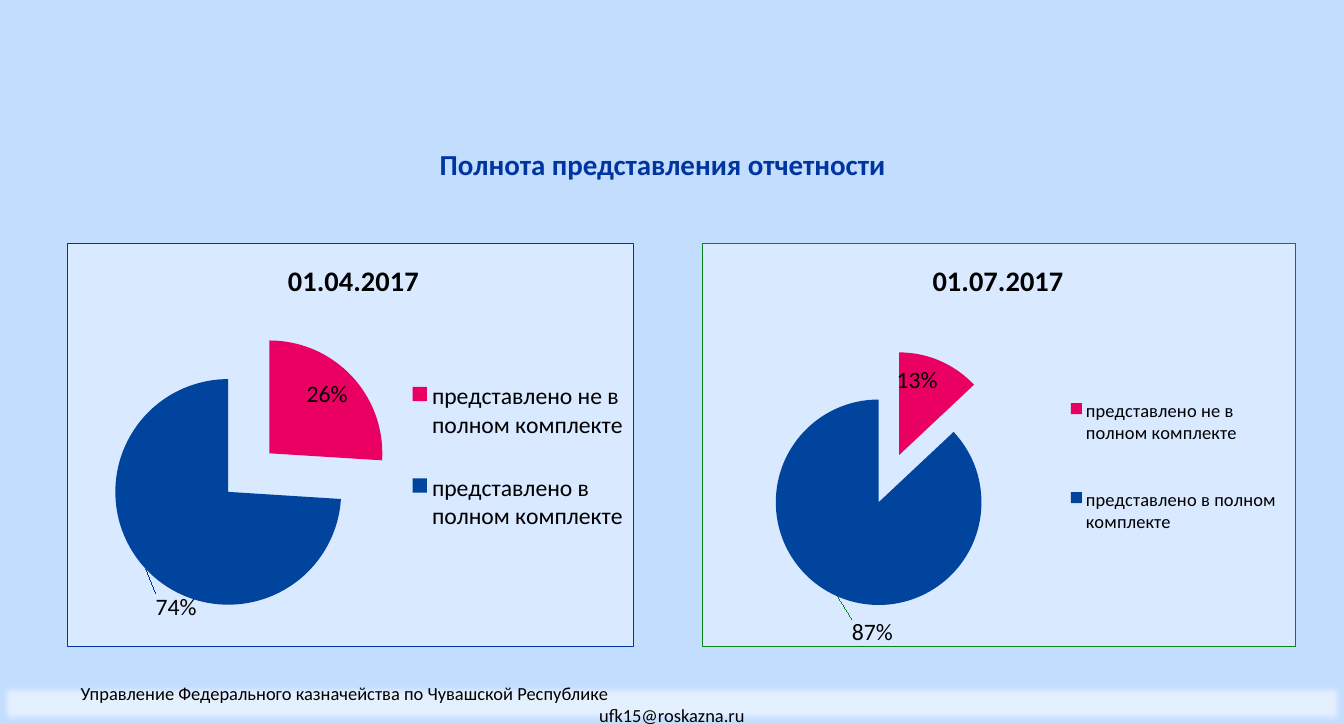
from lxml import etree
from pptx import Presentation
from pptx.chart.data import CategoryChartData
from pptx.dml.color import RGBColor
from pptx.enum.chart import XL_CHART_TYPE, XL_LABEL_POSITION, XL_LEGEND_POSITION
from pptx.enum.shapes import MSO_SHAPE
from pptx.enum.text import MSO_ANCHOR, PP_ALIGN
from pptx.oxml import parse_xml
from pptx.oxml.ns import nsdecls, qn
from pptx.util import Inches, Pt

PIE = XL_CHART_TYPE.PIE_EXPLODED
INSIDE_END = XL_LABEL_POSITION.INSIDE_END
LEGEND_RIGHT = XL_LEGEND_POSITION.RIGHT
RECTANGLE = MSO_SHAPE.RECTANGLE
MIDDLE = MSO_ANCHOR.MIDDLE
LEFT, CENTER = PP_ALIGN.LEFT, PP_ALIGN.CENTER

COLORS = {
    "background": "C3DDFF",
    "panel": "D9E9FF",
    "footer": "E5F0FF",
    "navy": "00349E",
    "green": "0A8416",
    "incomplete": "E90062",
    "complete": "00449E",
    "text": "000000",
}
CATEGORIES = ["представлено не в полном комплекте", "представлено в полном комплекте"]


def color(name):
    return RGBColor.from_string(COLORS[name])


def place(parent, index, **values):
    for layout in parent.findall(qn("c:layout")):
        parent.remove(layout)
    layout = etree.Element(qn("c:layout"))
    manual = etree.SubElement(layout, qn("c:manualLayout"))
    for tag, value in values.items():
        etree.SubElement(manual, qn(f"c:{tag}"), val=str(value))
    parent.insert(index, layout)


def place_edge(parent, index, left, top, **values):
    place(parent, index, xMode="edge", yMode="edge", x=left, y=top, **values)


class ReportSlide:
    font_name = "Calibri"

    def __init__(self, presentation):
        self.width = presentation.slide_width
        self.height = presentation.slide_height
        self.slide = presentation.slides.add_slide(presentation.slide_layouts[5])
        self.slide.background.fill.solid()
        self.slide.background.fill.fore_color.rgb = color("background")

    def box(self, left, top, width, height):
        return (round(left * self.width), round(top * self.height),
                round(width * self.width), round(height * self.height))

    def style(self, font, size, name="text", bold=False):
        font.name = self.font_name
        font.size = Pt(size)
        font.bold = bold
        font.color.rgb = color(name)

    def title(self, text, *area):
        title = self.slide.shapes.title
        title.left, title.top, title.width, title.height = self.box(*area)
        title.text_frame.text = text
        title.text_frame.vertical_anchor = MIDDLE
        paragraph = title.text_frame.paragraphs[0]
        paragraph.alignment = CENTER
        self.style(paragraph.font, 22, "navy", True)

    def pie(self, date, values, border, area, title_at, plot_at, legend_at, legend_size, label_shift):
        data = CategoryChartData(number_format="0%")
        data.categories = CATEGORIES
        data.add_series(date, values)
        chart = self.slide.shapes.add_chart(PIE, *self.box(*area), data).chart
        self.style(chart.font, 18)
        chart.has_title = True
        chart.chart_title.text_frame.text = date
        self.style(chart.chart_title.text_frame.paragraphs[0].font, 21.6, bold=True)
        chart.has_legend = True
        chart.legend.position = LEGEND_RIGHT
        chart.legend.include_in_layout = False
        self.style(chart.legend.font, legend_size)

        series = chart.plots[0].series[0]
        series.format.line.color.rgb = color(border)
        series.format.line.width = Pt(0.75)
        for index, name in enumerate(["incomplete", "complete"]):
            point = series.points[index]
            point.format.fill.solid()
            point.format.fill.fore_color.rgb = color(name)
            point.format.line.fill.background()
        labels = series.data_labels
        labels.show_value = True
        labels.show_percentage = False
        labels.number_format = "0%"
        labels.number_format_is_linked = False
        labels.position = INSIDE_END
        self.style(labels.font, 18)
        moved_label = series.points[1].data_label
        moved_label.position = INSIDE_END
        self.style(moved_label.font, 18)

        root = chart.element
        chart_element = root.find(qn("c:chart"))
        for explosion in list(root.iter(qn("c:explosion"))):
            explosion.getparent().remove(explosion)
        for point_element in root.iter(qn("c:dPt")):
            explosion = etree.Element(qn("c:explosion"), val="25")
            point_element.find(qn("c:spPr")).addprevious(explosion)
        label_element = next(root.iter(qn("c:dLbl")))
        label_element.insert(1, etree.Element(qn("c:numFmt"), formatCode="0%", sourceLinked="0"))
        place(label_element, 1, x=label_shift[0], y=label_shift[1])
        place_edge(chart_element.find(qn("c:title")), 1, *title_at)
        left, top, width, height = plot_at
        place(chart_element.find(qn("c:plotArea")), 0, layoutTarget="inner", xMode="edge",
              yMode="edge", x=left, y=top, w=width, h=height)
        left, top, width, height = legend_at
        place_edge(chart_element.find(qn("c:legend")), 1, left, top, w=width, h=height)
        for corners in root.findall(qn("c:roundedCorners")):
            root.remove(corners)
        chart_element.addprevious(etree.Element(qn("c:roundedCorners"), val="0"))
        root.find(qn("c:txPr")).addprevious(parse_xml(
            f'<c:spPr {nsdecls("c", "a")}>'
            f'<a:solidFill><a:srgbClr val="{COLORS["panel"]}"/></a:solidFill>'
            f'<a:ln w="{Pt(0.75)}"><a:solidFill><a:srgbClr val="{COLORS[border]}"/>'
            '</a:solidFill></a:ln></c:spPr>'))

    def footer(self, lines, *area):
        shape = self.slide.shapes.add_shape(RECTANGLE, *self.box(*area))
        shape.shadow.inherit = False
        shape.fill.solid()
        shape.fill.fore_color.rgb = color("footer")
        shape.line.fill.background()
        effects = shape.element.spPr.find(qn("a:effectLst"))
        etree.SubElement(effects, qn("a:softEdge"), rad=str(Pt(5)))
        frame = shape.text_frame
        frame.word_wrap = True
        frame.vertical_anchor = MIDDLE
        frame.margin_top = frame.margin_bottom = 0
        frame.margin_left = frame.margin_right = 0
        for index, (text, alignment, indent) in enumerate(lines):
            paragraph = frame.paragraphs[0] if index == 0 else frame.add_paragraph()
            paragraph.text = text
            paragraph.alignment = alignment
            paragraph._p.get_or_add_pPr().set("marL", str(round(indent * self.width)))
            self.style(paragraph.font, 14)


def main():
    presentation = Presentation()
    presentation.slide_width = Inches(14.18)
    presentation.slide_height = Inches(7.64)
    report = ReportSlide(presentation)
    report.title("Полнота представления отчетности", 0.178, 0.192, 0.63, 0.07)
    top, height = 0.335, 0.558
    report.pie("01.04.2017", (0.26, 0.74), "navy", (0.05, top, 0.422, height),
               (0.38, 0.03), (0.12, 0.29, 0.4, 0.56), (0.6, 0.26, 0.39, 0.54), 18, (0.01, 0.14))
    report.pie("01.07.2017", (0.13, 0.87), "green", (0.522, top, 0.442, height),
               (0.38, 0.03), (0.14, 0.33, 0.35, 0.51), (0.61, 0.28, 0.37, 0.55), 14, (0.02, 0.14))
    report.footer([("Управление Федерального казначейства по Чувашской Республике", LEFT, 0.06),
                   ("ufk15@roskazna.ru", CENTER, 0)], 0, 0.944, 1, 0.056)
    presentation.save("out.pptx")


if __name__ == "__main__":
    main()
